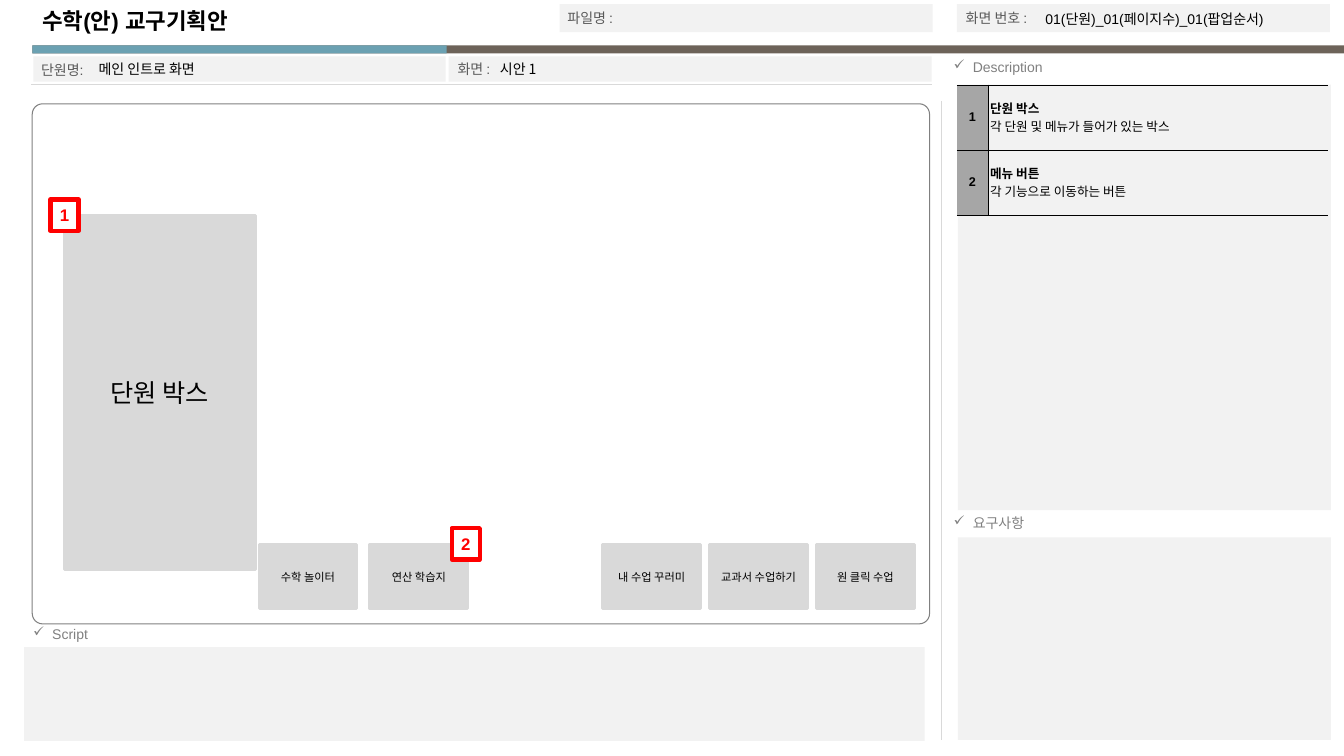
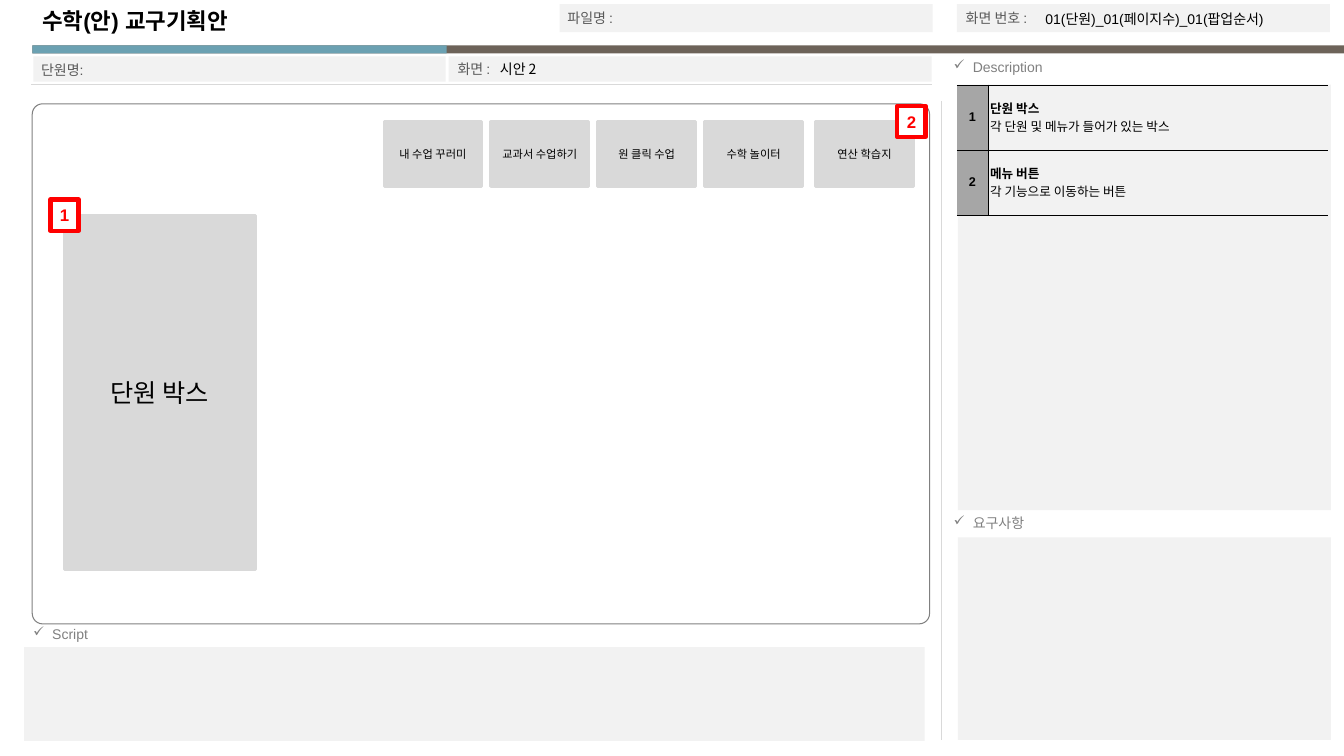
from dataclasses import dataclass

from lxml.etree import SubElement
from pptx import Presentation
from pptx.dml.color import RGBColor
from pptx.enum.shapes import MSO_CONNECTOR as Connector, MSO_SHAPE as Preset
from pptx.enum.text import MSO_ANCHOR as Anchor, MSO_AUTO_SIZE as AutoSize, PP_ALIGN as Align
from pptx.oxml import parse_xml
from pptx.oxml.ns import nsdecls, qn
from pptx.util import Inches, Pt

COLORS = {
    "brown": "6D6359",
    "teal": "6BA1B2",
    "panel": "F2F2F2",
    "rule": "D9D9D9",
    "heading": "808080",
    "label": "595959",
    "number": "A6A6A6",
    "badge": "FF0000",
    "black": "000000",
    "white": "FFFFFF",
}
LATIN = "Arial"
KOREAN = "Noto Sans CJK KR"


@dataclass(frozen=True)
class Box:
    left: float
    top: float
    width: float
    height: float

    def lengths(self) -> list:
        return [Inches(value) for value in (self.left, self.top, self.width, self.height)]


@dataclass(frozen=True)
class TextStyle:
    size: float
    color: str = "black"
    font: str = KOREAN
    bold: bool = False


@dataclass(frozen=True)
class Section:
    heading: str
    heading_box: Box
    panel: Box


@dataclass(frozen=True)
class Field:
    label: str
    panel: Box
    label_box: Box


@dataclass(frozen=True)
class ButtonRow:
    left: float
    top: float
    pitch: float
    labels: tuple


@dataclass(frozen=True)
class Badge:
    number: str
    left: float
    top: float


@dataclass(frozen=True)
class Screen:
    unit_name: str
    screen_name: str
    button_rows: tuple
    badges: tuple


TITLE = TextStyle(16, font=LATIN, bold=True)
HEADING = TextStyle(10, "heading", LATIN)
LABEL = TextStyle(10, "label", LATIN)
VALUE = TextStyle(10)
CODE = TextStyle(10, font=LATIN)
UNIT = TextStyle(18)
BUTTON = TextStyle(8)
BADGE = TextStyle(12, "badge", LATIN, True)
CELL_NUMBER = TextStyle(9, font=LATIN, bold=True)
CELL_TITLE = TextStyle(9, bold=True)
CELL_BODY = TextStyle(9)

SECTIONS = (
    Section("Description", Box(9.36, 0.53, 3.97, 0.27), Box(9.5, 0.84, 3.7, 4.22)),
    Section("요구사항", Box(9.36, 5.06, 3.97, 0.27), Box(9.5, 5.33, 3.7, 2.01)),
    Section("Script", Box(0.23, 6.16, 3.94, 0.31), Box(0.24, 6.42, 8.93, 0.93)),
)
FIELDS = (
    Field("단원명:", Box(0.33, 0.56, 4.09, 0.25), Box(0.31, 0.57, 3.66, 0.25)),
    Field("화면 :", Box(4.45, 0.56, 4.79, 0.25), Box(4.44, 0.56, 3.66, 0.25)),
    Field("파일명 :", Box(5.55, 0.04, 3.7, 0.28), Box(5.53, 0.05, 3.66, 0.25)),
    Field("화면 번호 :", Box(9.49, 0.04, 3.7, 0.28), Box(9.48, 0.05, 3.66, 0.25)),
)
DESCRIPTIONS = (
    ("단원 박스", "각 단원 및 메뉴가 들어가 있는 박스"),
    ("메뉴 버튼", "각 기능으로 이동하는 버튼"),
)
LESSON_LABELS = ("내 수업 꾸러미", "교과서 수업하기", "원 클릭 수업")
PRACTICE_LABELS = ("수학 놀이터", "연산 학습지")
SCREENS = (
    Screen(
        "메인 인트로 화면",
        "시안 1",
        (ButtonRow(5.98, 5.4, 1.06, LESSON_LABELS), ButtonRow(2.57, 5.4, 1.1, PRACTICE_LABELS)),
        (Badge("1", 0.5, 1.98), Badge("2", 4.48, 5.24)),
    ),
    Screen(
        "",
        "시안 2",
        (ButtonRow(3.81, 1.21, 1.06, LESSON_LABELS), ButtonRow(6.99, 1.21, 1.1, PRACTICE_LABELS)),
        (Badge("1", 0.5, 1.98), Badge("2", 8.9, 1.05)),
    ),
)


def rgb(name: str) -> RGBColor:
    return RGBColor.from_string(COLORS[name])


def add_run(paragraph, text: str, style: TextStyle) -> None:
    run = paragraph.add_run()
    run.text = text
    run.font.size = Pt(style.size)
    run.font.bold = style.bold
    run.font.color.rgb = rgb(style.color)
    run.font.name = style.font
    SubElement(run.font._element, qn("a:ea")).set("typeface", KOREAN)


def add_box(slide, box: Box, fill: str, line: str = "", line_width: float = 0,
            preset=Preset.RECTANGLE):
    shape = slide.shapes.add_shape(preset, *box.lengths())
    shape.shadow.inherit = False
    shape.fill.solid()
    shape.fill.fore_color.rgb = rgb(fill)
    if line:
        shape.line.color.rgb = rgb(line)
        shape.line.width = Pt(line_width)
    else:
        shape.line.fill.background()
    return shape


def add_label_box(slide, box: Box, text: str, style: TextStyle, fill: str,
                  line: str, line_width: float) -> None:
    frame = add_box(slide, box, fill, line, line_width).text_frame
    frame.margin_left = frame.margin_right = 0
    frame.margin_top = frame.margin_bottom = 0
    frame.vertical_anchor = Anchor.MIDDLE
    paragraph = frame.paragraphs[0]
    paragraph.alignment = Align.CENTER
    add_run(paragraph, text, style)


def add_text(slide, box: Box, text: str, style: TextStyle, anchor=Anchor.MIDDLE):
    frame = slide.shapes.add_textbox(*box.lengths()).text_frame
    frame.word_wrap = True
    frame.vertical_anchor = anchor
    paragraph = frame.paragraphs[0]
    add_run(paragraph, text, style)
    return paragraph


def add_rule(slide, start: tuple, end: tuple) -> None:
    points = [Inches(value) for value in (*start, *end)]
    connector = slide.shapes.add_connector(Connector.STRAIGHT, *points)
    connector.line.color.rgb = rgb("rule")
    connector.line.width = Pt(0.75)
    SubElement(connector._element.spPr, qn("a:effectLst"))


def add_section(slide, section: Section) -> None:
    add_box(slide, section.panel, "panel")
    paragraph = add_text(slide, section.heading_box, section.heading, HEADING, Anchor.TOP)
    properties = paragraph._p.get_or_add_pPr()
    properties.set("marL", str(Inches(0.19)))
    properties.set("indent", str(Inches(-0.19)))
    SubElement(properties, qn("a:buChar")).set("char", "✓")


def add_title(slide) -> None:
    title = slide.shapes.title
    title.left, title.top, title.width, title.height = Box(0.32, 0.02, 5.2, 0.37).lengths()
    frame = title.text_frame
    frame.auto_size = AutoSize.NONE
    frame.vertical_anchor = Anchor.MIDDLE
    paragraph = frame.paragraphs[0]
    paragraph.alignment = Align.LEFT
    add_run(paragraph, "수학(안) 교구기획안", TITLE)


def add_frame(slide) -> None:
    add_box(slide, Box(0.32, 0.45, 13.01, 0.08), "brown")
    add_box(slide, Box(0.32, 0.45, 4.11, 0.08), "teal")
    add_rule(slide, (9.34, 1), (9.34, 7.34))
    for section in SECTIONS:
        add_section(slide, section)
    for field in FIELDS:
        add_box(slide, field.panel, "panel")
        add_text(slide, field.label_box, field.label, LABEL)
    add_rule(slide, (0.31, 0.84), (9.24, 0.84))
    canvas = add_box(slide, Box(0.32, 1.03, 8.9, 5.16), "white", "heading", 0.75,
                     Preset.ROUNDED_RECTANGLE)
    canvas.adjustments[0] = 0.02


def set_borders(cell, visible: str) -> None:
    properties = cell._tc.get_or_add_tcPr()
    for index, side in enumerate("LRTB"):
        paint = "<a:noFill/>"
        if side in visible:
            paint = f'<a:solidFill><a:srgbClr val="{COLORS["black"]}"/></a:solidFill>'
        border = f'<a:ln{side} {nsdecls("a")} w="{Pt(0.25)}">{paint}</a:ln{side}>'
        properties.insert(index, parse_xml(border))


def format_cell(cell, visible: str) -> None:
    cell.vertical_anchor = Anchor.MIDDLE
    cell.margin_left = cell.margin_right = Inches(0.02)
    cell.margin_top = cell.margin_bottom = Inches(0.02)
    set_borders(cell, visible)


def add_descriptions(slide) -> None:
    box = Box(9.49, 0.84, 3.68, 1.29)
    table = slide.shapes.add_table(len(DESCRIPTIONS), 2, *box.lengths()).table
    table.first_row = table.horz_banding = False
    for column, width in zip(table.columns, (0.31, 3.37)):
        column.width = Inches(width)
    for index, (heading, detail) in enumerate(DESCRIPTIONS):
        number_cell, text_cell = table.cell(index, 0), table.cell(index, 1)
        number_cell.fill.solid()
        number_cell.fill.fore_color.rgb = rgb("number")
        text_cell.fill.background()
        format_cell(number_cell, "RTB")
        format_cell(text_cell, "LTB")
        number = number_cell.text_frame.paragraphs[0]
        number.alignment = Align.CENTER
        add_run(number, str(index + 1), CELL_NUMBER)
        add_run(text_cell.text_frame.paragraphs[0], heading, CELL_TITLE)
        add_run(text_cell.text_frame.add_paragraph(), detail, CELL_BODY)


def add_button_row(slide, row: ButtonRow) -> None:
    for index, label in enumerate(row.labels):
        box = Box(row.left + index * row.pitch, row.top, 0.97, 0.64)
        add_label_box(slide, box, label, BUTTON, "rule", "rule", 2.25)


def add_screen(presentation, screen: Screen) -> None:
    slide = presentation.slides.add_slide(presentation.slide_layouts[5])
    add_frame(slide)
    add_title(slide)
    if screen.unit_name:
        add_text(slide, Box(0.88, 0.56, 3.89, 0.25), screen.unit_name, VALUE)
    add_text(slide, Box(4.86, 0.56, 4.38, 0.25), screen.screen_name, VALUE)
    add_text(slide, Box(10.27, 0.06, 2.9, 0.25), "01(단원)_01(페이지수)_01(팝업순서)", CODE)
    add_descriptions(slide)
    add_label_box(slide, Box(0.64, 2.14, 1.89, 3.51), "단원 박스", UNIT, "rule", "rule", 2.25)
    for row in screen.button_rows:
        add_button_row(slide, row)
    for badge in screen.badges:
        box = Box(badge.left, badge.top, 0.28, 0.31)
        add_label_box(slide, box, badge.number, BADGE, "white", "badge", 3)


def main() -> None:
    presentation = Presentation()
    presentation.slide_width = Inches(13.33)
    presentation.slide_height = Inches(7.5)
    for screen in SCREENS:
        add_screen(presentation, screen)
    presentation.save("out.pptx")


if __name__ == "__main__":
    main()
